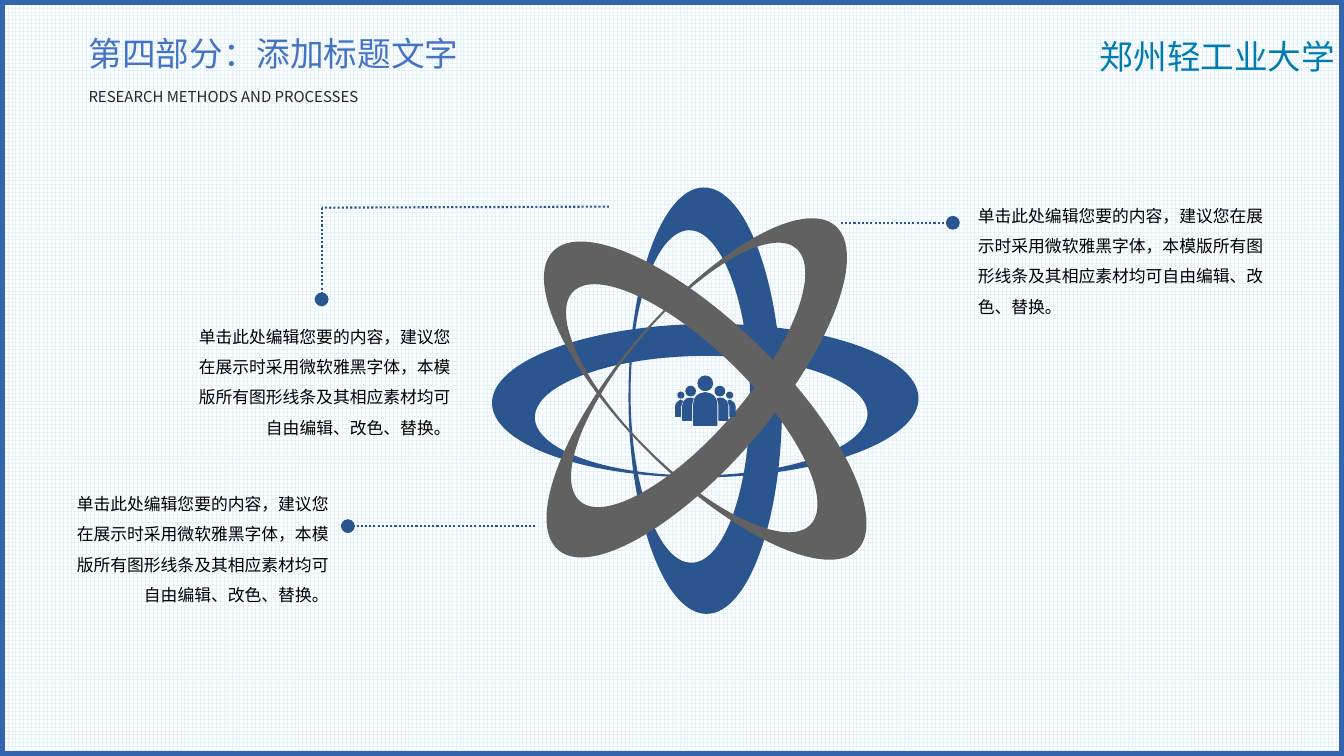
import math
from pptx import Presentation, util as u
from pptx.dml.color import RGBColor
from pptx.enum import dml, shapes, text
from pptx.oxml import parse_xml
from pptx.oxml.ns import nsdecls, qn

WIDTH, HEIGHT = 13.33, 7.5
FONT = "Noto Sans CJK SC"
BLUE, GREY = "2A558E", "616161"
CAPTION = ("单击此处编辑您要的内容，建议您在展示时采用微软雅黑字体，"
           "本模版所有图形线条及其相应素材均可自由编辑、改色、替换。")
LEFT, RIGHT = text.PP_ALIGN.LEFT, text.PP_ALIGN.RIGHT


def paint(color, value):
    """Set a colour from a hex string."""
    color.rgb = RGBColor.from_string(value)


def write(frame, words, size, color, wrap=True, align=LEFT, spacing=1.0):
    """Fill a text frame with one formatted run."""
    frame.word_wrap = wrap
    frame.auto_size = text.MSO_AUTO_SIZE.NONE
    frame.vertical_anchor = text.MSO_ANCHOR.TOP
    paragraph = frame.paragraphs[0]
    paragraph.alignment = align
    paragraph.line_spacing = spacing
    run = paragraph.add_run()
    run.text = words
    run.font.size = u.Pt(size)
    paint(run.font.color, color)
    run.font.name = FONT
    run._r.get_or_add_rPr().append(parse_xml(f'<a:ea {nsdecls("a")} typeface="{FONT}"/>'))


def text_box(slide, box, *args, **kwargs):
    """Add a text box holding one run."""
    label = slide.shapes.add_textbox(*map(u.Inches, box))
    write(label.text_frame, *args, **kwargs)


def outline(slide, contours, color):
    """Draw closed contours, given in inches, as one filled shape."""
    contours = [[(u.Inches(x), u.Inches(y)) for x, y in points] for points in contours]
    builder = slide.shapes.build_freeform(*contours[0][0])
    for index, points in enumerate(contours):
        if index:
            builder.move_to(*points[0])
        builder.add_line_segments(points[1:], close=True)
    figure = builder.convert_to_shape()
    figure.shadow.inherit = False
    figure.fill.solid()
    paint(figure.fill.fore_color, color)
    figure.line.fill.background()
    return figure


def smooth_out(figure):
    """Turn every three straight segments into one cubic curve."""
    segments = list(figure._element.iter(qn("a:lnTo")))
    for first in range(0, len(segments), 3):
        curve = parse_xml(f'<a:cubicBezTo {nsdecls("a")}/>')
        segments[first].addprevious(curve)
        for segment in segments[first:first + 3]:
            curve.append(segment[0])
            segment.getparent().remove(segment)


def ellipse(cx, cy, rx, ry):
    """Return the start and the control points of four quarter curves."""
    k = 0.55
    unit = [(1, 0), (1, k), (k, 1), (0, 1), (-k, 1), (-1, k), (-1, 0),
            (-1, -k), (-k, -1), (0, -1), (k, -1), (1, -k), (1, 0)]
    return [(cx + rx * x, cy + ry * y) for x, y in unit]


def head(cx, cy, radius, steps=12):
    """Return points around a head."""
    turns = [2 * math.pi * step / steps for step in range(steps)]
    return [(cx + radius * math.cos(t), cy + radius * math.sin(t)) for t in turns]


def backdrop(slide, box):
    """Set the grid background and the frame."""
    fill = slide.background.fill
    fill.patterned()
    fill.pattern = dml.MSO_PATTERN.LARGE_GRID
    paint(fill.fore_color, "E4F2FC")
    paint(fill.back_color, "FFFFFF")
    frame = slide.shapes.add_shape(shapes.MSO_SHAPE.RECTANGLE, *map(u.Inches, box))
    frame.shadow.inherit = False
    frame.fill.background()
    paint(frame.line.color, "3165B0")
    frame.line.width = u.Pt(6.75)


def header(slide, box):
    """Place the title, its subtitle and the university name."""
    left, top, width, height = box
    title = slide.shapes.title
    title.left, title.top, title.width, title.height = map(u.Inches, (left, top, 3.9, height))
    write(title.text_frame, "第四部分：添加标题文字", 24, "4472C4", wrap=False)
    text_box(slide, (left, top + 0.54, 2.96, 0.28),
             "RESEARCH METHODS AND PROCESSES", 10.7, "262626", wrap=False)
    text_box(slide, (left + width - 2.52, top + 0.03, 2.52, height),
             "郑州轻工业大学", 24, "007CB1", wrap=False)


def orbits(slide, box):
    """Turn one off-centre ring into the four orbits of an atom."""
    left, top, size = box
    outer = ellipse(0, 0, 0.5, 0.18)
    hole = ellipse(-0.01, 0.035, 0.39, 0.14)
    for degrees, dx, dy, color in ((-0.7, 0, 0, BLUE), (89.6, 0, 0, BLUE),
                                   (44.5, 0, 0, GREY), (130.5, -0.02, -0.03, GREY)):
        cos, sin = math.cos(math.radians(degrees)), math.sin(math.radians(degrees))
        orbit = outline(slide, [[(left + size * (0.5 + dx + x * cos - y * sin),
                                  top + size * (0.5 + dy + x * sin + y * cos))
                                 for x, y in points] for points in (outer, hole[::-1])], color)
        smooth_out(orbit)


def team(slide, box):
    """Draw five people, mirrored about the leader, in a 59 by 49 grid."""
    left, top, width, height = box
    shoulder = [(-11.5, 49), (-11.5, 28), (-10.5, 23), (-8, 19.5), (-4.5, 17.5)]
    leader = shoulder + [(0, 16.5)] + [(-x, y) for x, y in shoulder[::-1]]
    colleague = [(-13.5, 28), (-13.5, 44), (-22.5, 44), (-22.5, 30),
                 (-21, 25), (-18, 22.5), (-14.5, 22), (-12, 22.5)]
    outsider = [(-24.5, 30), (-24.5, 40), (-29.5, 40), (-29.5, 30),
                (-28.5, 27), (-26, 25), (-24.5, 24), (-22.5, 25)]
    one_side = [colleague, outsider, head(-14.5, 15, 4.8), head(-24.2, 19, 3)]
    other_side = [[(-x, y) for x, y in points] for points in one_side]
    people = [leader, head(0, 7.3, 7.3)] + one_side + other_side
    icon = outline(slide, [[(left + width * (0.5 + x / 59), top + height * y / 49)
                            for x, y in points] for points in people], BLUE)
    paint(icon.line.color, BLUE)
    icon.line.width = u.Pt(0.75)


def callout(slide, box, align, leader):
    """Place a caption and its dotted leader, measured from the caption's corner."""
    left, top = box[:2]
    points = [(u.Inches(left + x), u.Inches(top + y)) for x, y in leader]
    for start, end in zip(points, points[1:]):
        dots = slide.shapes.add_connector(shapes.MSO_CONNECTOR.STRAIGHT, *start, *end)
        paint(dots.line.color, BLUE)
        dots.line.width = u.Pt(1.5)
        dots.line.dash_style = dml.MSO_LINE.ROUND_DOT
        properties = dots._element.spPr
        properties.append(parse_xml(f'<a:effectLst {nsdecls("a")}/>'))
    properties.find(qn("a:ln")).append(
        parse_xml(f'<a:tailEnd {nsdecls("a")} type="oval" w="lg" len="lg"/>'))
    text_box(slide, box, CAPTION, 12, "000000", align=align, spacing=1.5)


def main():
    """Build the slide and save it."""
    deck = Presentation()
    deck.slide_width, deck.slide_height = u.Inches(WIDTH), u.Inches(HEIGHT)
    slide = deck.slides.add_slide(deck.slide_layouts[5])
    backdrop(slide, (0, 0, WIDTH, HEIGHT))
    header(slide, (0.78, 0.28, WIDTH - 0.78, 0.5))
    orbits(slide, (4.88, 1.86, 4.23))
    team(slide, (6.7, 3.73, 0.59, 0.49))
    callout(slide, (1.73, 3.09, 2.84, 1.28), RIGHT, [(4.31, -1.04), (1.46, -1.03), (1.46, -0.12)])
    callout(slide, (9.6, 1.89, 3.15, 1.28), LEFT, [(-1.26, 0.32), (-0.15, 0.32)])
    callout(slide, (0.52, 4.75, 2.84, 1.28), RIGHT, [(4.79, 0.47), (2.93, 0.47)])
    deck.save("out.pptx")


if __name__ == "__main__":
    main()
